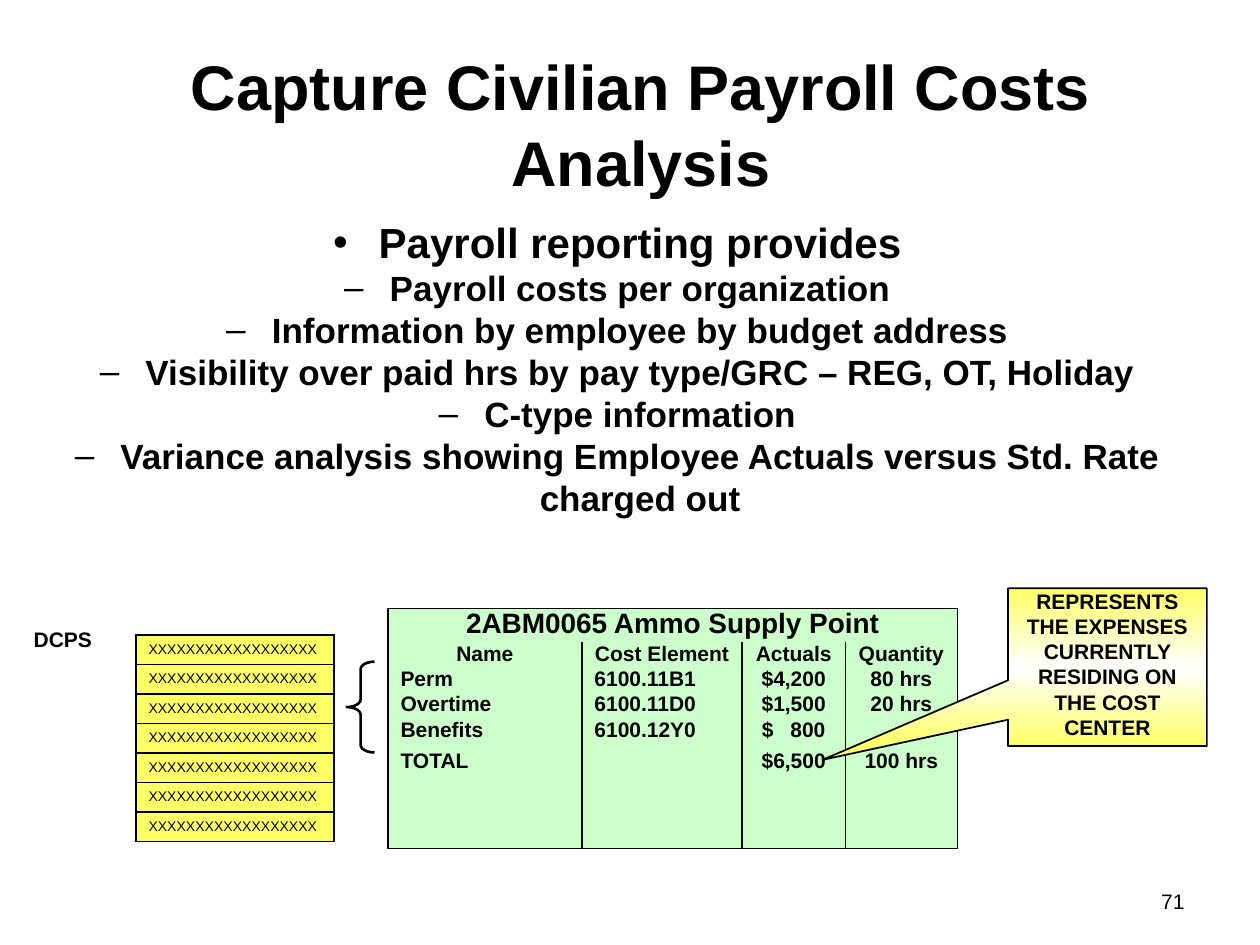
from lxml.etree import SubElement as Sub
from pptx import Presentation
from pptx.dml.color import RGBColor
from pptx.enum.shapes import MSO_SHAPE as Shape
from pptx.enum.text import MSO_ANCHOR as Anchor, PP_ALIGN as Align
from pptx.oxml.ns import qn
from pptx.util import Cm, Pt

BLACK, GREEN, YELLOW = "000000", "CCFFCC", "FFFF66"
POINTS = [
    "Payroll reporting provides",
    "Payroll costs per organization",
    "Information by employee by budget address",
    "Visibility over paid hrs by pay type/GRC – REG, OT, Holiday",
    "C-type information",
    "Variance analysis showing Employee Actuals versus Std. Rate charged out",
]
COSTS = [
    ["Name", "Cost Element", "Actuals", "Quantity"],
    ["Perm", "6100.11B1", "$4,200", "80 hrs"],
    ["Overtime", "6100.11D0", "$1,500", "20 hrs"],
    ["Benefits", "6100.12Y0", "$\t800", ""],
    ["TOTAL", "", "$6,500", "100 hrs"],
] + [[""] * 4] * 3


def color(code):
    """Turn a hex string into a colour."""
    return RGBColor.from_string(code)


def style(para, size, bold=True, align=Align.LEFT, lead=None):
    """Format a paragraph and its runs."""
    para.alignment = align
    if lead:
        para.line_spacing = Pt(lead * size)
    for run in para.runs:
        font = run.font
        font.name, font.size, font.bold = "Arial", Pt(size), bold
        font.color.rgb = color(BLACK)
    if not para.runs:
        Sub(para._p, qn("a:endParaRPr"), sz=str(size * 100))


def label(slide, box, text, size, bold=True, align=Align.LEFT, wrap=True):
    """Add a text box holding one paragraph."""
    frame = slide.shapes.add_textbox(*map(Cm, box)).text_frame
    frame.word_wrap = wrap
    frame.text = text
    style(frame.paragraphs[0], size, bold, align, 1.2)


def bullets(slide, box):
    """Add the centred bullet list."""
    frame = slide.shapes.add_textbox(*map(Cm, box)).text_frame
    frame.word_wrap = True
    for i, text in enumerate(POINTS):
        para = frame.add_paragraph() if i else frame.paragraphs[0]
        para.text = text
        para.level = min(i, 1)
        style(para, 20 if i else 24, align=Align.CENTER, lead=1.2)
        props = para._p.get_or_add_pPr()
        props.set("marL", str(Cm(1.27)))
        props.set("indent", str(Cm(-0.92)))
        Sub(props, qn("a:buFont"), typeface="Arial")
        Sub(props, qn("a:buChar"), char="–" if i else "•")


def border(cell, sides):
    """Draw thin black lines on the named sides and none on the rest."""
    props = cell._tc.get_or_add_tcPr()
    for at, side in enumerate("LRTB"):
        line = props.makeelement(qn(f"a:ln{side}"), {"w": str(Pt(1))})
        if side in sides:
            Sub(Sub(line, qn("a:solidFill")), qn("a:srgbClr"), val=BLACK)
        else:
            Sub(line, qn("a:noFill"))
        props.insert(at, line)


def grid(slide, left, top, widths, heights, fill):
    """Add a plain filled table."""
    size = map(Cm, (left, top, sum(widths), sum(heights)))
    table = slide.shapes.add_table(len(heights), len(widths), *size).table
    table.first_row = table.horz_banding = False
    for col, width in zip(table.columns, widths):
        col.width = Cm(width)
    for row, height in zip(table.rows, heights):
        row.height = Cm(height)
    for cell in table.iter_cells():
        cell.fill.solid()
        cell.fill.fore_color.rgb = color(fill)
    return table


def records(slide, left, top, width, height, count=7):
    """Add the stack of payroll records."""
    table = grid(slide, left, top, [width], [height / count] * count, YELLOW)
    for cell in table.iter_cells():
        cell.text = "X" * 18
        style(cell.text_frame.paragraphs[0], 8, False)
        border(cell, "LRTB")


def costs(slide, left, top):
    """Add the cost table of the supply point."""
    table = grid(slide, left, top, [3.91, 3.23, 2.08, 2.26],
                 [0.62, 0.48, 0.48, 0.48, 0.64, 0.53, 0.5, 0.48, 0.48], GREEN)
    for cell in table.iter_cells():
        cell.margin_top = cell.margin_bottom = 0
    head = table.cell(0, 0)
    head.merge(table.cell(0, 3))
    head.text = "2ABM0065 Ammo Supply Point"
    style(head.text_frame.paragraphs[0], 16, align=Align.CENTER)
    for col in range(4):
        border(table.cell(0, col), "LRT")
    for r, line in enumerate(COSTS, 1):
        for c, text in enumerate(line):
            cell = table.cell(r, c)
            cell.text = text
            para = cell.text_frame.paragraphs[0]
            mid = (r == 1 or c > 1) and "\t" not in text
            style(para, 12 if text else 8, align=Align.CENTER if mid else Align.LEFT)
            border(cell, "LRB" if r == len(COSTS) else "LR")
            if "\t" in text:
                cell.margin_left = Cm(0.4)
                tabs = Sub(para._p.get_or_add_pPr(), qn("a:tabLst"))
                Sub(tabs, qn("a:tab"), pos=str(Cm(1.28)), algn="r")


def outline(slide, kind, box, adjust, width):
    """Add a shape with a black line."""
    shape = slide.shapes.add_shape(kind, *map(Cm, box))
    shape.shadow.inherit = False
    for i, value in enumerate(adjust):
        shape.adjustments[i] = value
    shape.line.color.rgb = color(BLACK)
    shape.line.width = Pt(width)
    return shape


def callout(slide, box):
    """Add the callout with its yellow gradient."""
    shape = outline(slide, Shape.RECTANGULAR_CALLOUT, box, [-1.433, 0.588], 1)
    shape.fill.gradient()
    shape.fill.gradient_angle = 90
    stops = shape.fill._fill._gradFill.find(qn("a:gsLst"))
    for old in list(stops):
        stops.remove(old)
    for pos, code in ((0, YELLOW), (50000, "FFFFFF"), (100000, YELLOW)):
        Sub(Sub(stops, qn("a:gs"), pos=str(pos)), qn("a:srgbClr"), val=code)
    frame = shape.text_frame
    frame.word_wrap = True
    frame.vertical_anchor = Anchor.TOP
    frame.margin_top = frame.margin_bottom = 0
    frame.text = "REPRESENTS THE EXPENSES CURRENTLY RESIDING ON THE COST CENTER"
    style(frame.paragraphs[0], 12, align=Align.CENTER, lead=1.2)


def main():
    """Build the slide and save it."""
    deck = Presentation()
    deck.slide_width, deck.slide_height = Cm(25.4), Cm(19.05)
    slide = deck.slides.add_slide(deck.slide_layouts[6])
    label(slide, (18.21, 17.78, 5.92, 1.02), "71", 12, False, Align.RIGHT)
    label(slide, (3.18, 0.84, 19.48, 2.62),
          "Capture Civilian Payroll Costs\vAnalysis", 36, align=Align.CENTER)
    bullets(slide, (0.84, 4.24, 22.86, 13.64))
    brace = outline(slide, Shape.LEFT_BRACE, (6.99, 13.34, 0.56, 1.83),
                    [0.271, 0.5], 1.5)
    brace.fill.background()
    costs(slide, 7.82, 12.27)
    records(slide, 2.74, 12.8, 3.99, 4.17)
    callout(slide, (20.32, 11.86, 4.01, 3.18))
    label(slide, (0.43, 12.5, 1.68, 0.76), "DCPS", 12, wrap=False)
    deck.save("out.pptx")


if __name__ == "__main__":
    main()
